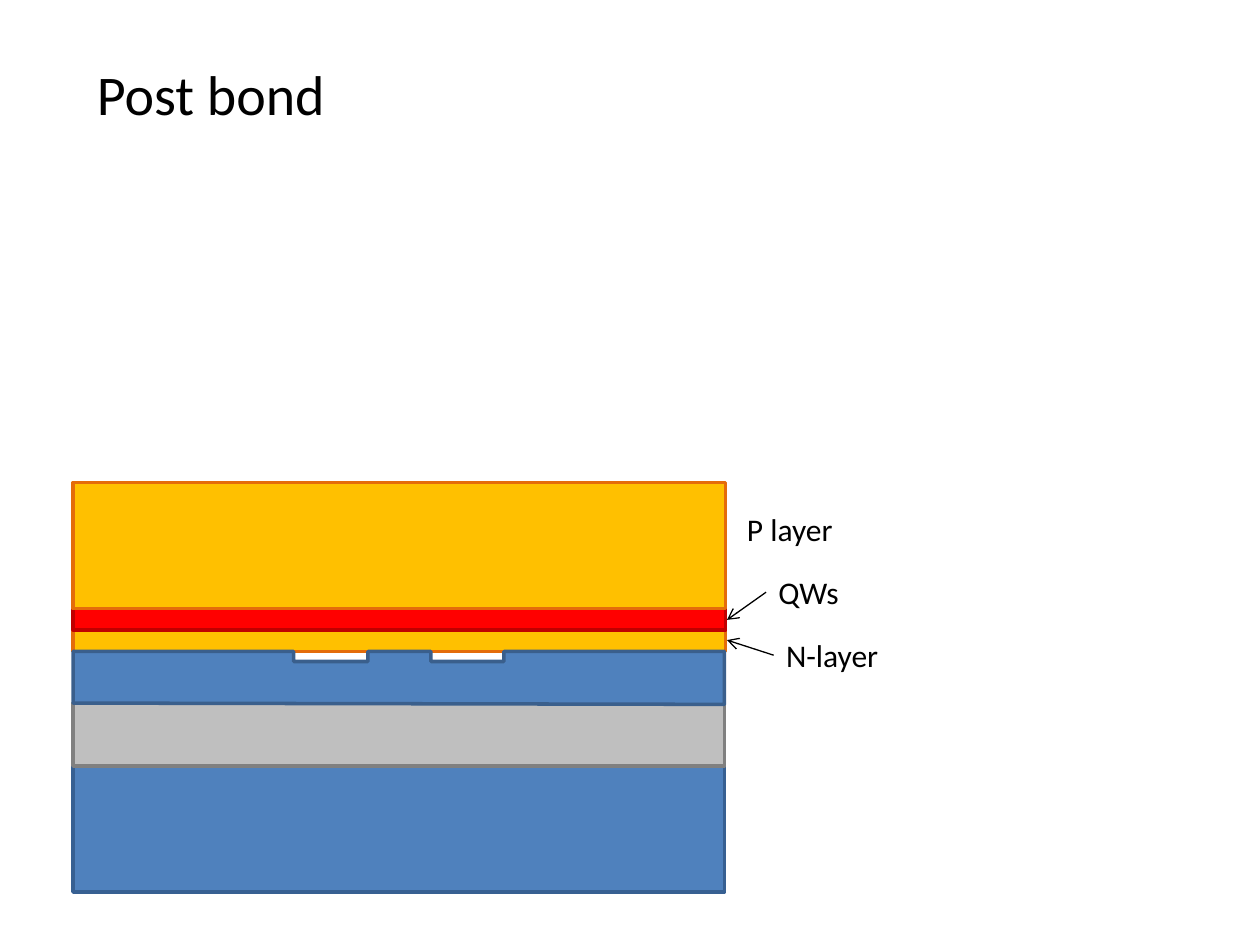
from lxml import etree
from pptx import Presentation
from pptx.dml.color import RGBColor
from pptx.enum.shapes import MSO_CONNECTOR, MSO_SHAPE
from pptx.oxml.ns import qn
from pptx.util import Inches, Pt

LEFT = 0.58
EPI_WIDTH, WAFER_WIDTH = 5.18, 5.17
LAYERS = [
    (5, EPI_WIDTH, 0.17, "FFC000", "E46C0A"),
    (4.83, EPI_WIDTH, 0.17, "FF0000", "C00000"),
    (3.83, EPI_WIDTH, 1, "FFC000", "E46C0A"),
    (6.08, WAFER_WIDTH, 1, "4F81BD", "376092"),
    (5.58, WAFER_WIDTH, 0.5, "BFBFBF", "808080"),
]
DEVICE_TOP, TRENCH_FLOOR = 5.17, 5.25
TRENCHES = [(2.33, 2.92), (3.42, 4)]
LABELS = [
    ("P layer", 5.83, 4, 0.89),
    ("QWs", 6.08, 4.5, 0.68),
    ("N-layer", 6.14, 5, 0.94),
]
ARROWS = [((6.08, 4.7), (5.77, 4.92)), ((6.14, 5.2), (5.77, 5.08))]


def color(hex_code):
    return RGBColor.from_string(hex_code)


def paint(shape, fill, line):
    shape.shadow.inherit = False
    shape.fill.solid()
    shape.fill.fore_color.rgb = color(fill)
    shape.line.color.rgb = color(line)
    shape.line.width = Pt(2)


def add_text(slide, text, left, top, width, height=0.4, size=18, wrap=False):
    box = slide.shapes.add_textbox(*map(Inches, (left, top, width, height)))
    box.text_frame.word_wrap = wrap
    run = box.text_frame.paragraphs[0].add_run()
    run.text = text
    run.font.size = Pt(size)
    run.font.name = "Calibri"
    run.font.color.rgb = color("000000")


def add_layer(slide, top, width, height, fill, line):
    box = map(Inches, (LEFT, top, width, height))
    paint(slide.shapes.add_shape(MSO_SHAPE.RECTANGLE, *box), fill, line)


def add_trenched_layer(slide):
    right = LEFT + WAFER_WIDTH
    outline = []
    for start, end in TRENCHES:
        outline += [(start, DEVICE_TOP), (start, TRENCH_FLOOR),
                    (end, TRENCH_FLOOR), (end, DEVICE_TOP)]
    outline += [(right, DEVICE_TOP), (right, 5.59), (LEFT, 5.58)]
    builder = slide.shapes.build_freeform(Inches(LEFT), Inches(DEVICE_TOP))
    builder.add_line_segments([(Inches(x), Inches(y)) for x, y in outline], close=True)
    paint(builder.convert_to_shape(), "4F81BD", "3A5F8C")


def add_arrow(slide, start, end):
    arrow = slide.shapes.add_connector(MSO_CONNECTOR.STRAIGHT, *map(Inches, start + end))
    arrow.line.color.rgb = color("000000")
    arrow.line.width = Pt(0.75)
    etree.SubElement(arrow.line._get_or_add_ln(), qn("a:tailEnd"), type="arrow")
    etree.SubElement(arrow._element.spPr, qn("a:effectLst"))


def main():
    deck = Presentation()
    deck.slide_width, deck.slide_height = Inches(10), Inches(7.5)
    slide = deck.slides.add_slide(deck.slide_layouts[6])
    for layer in LAYERS:
        add_layer(slide, *layer)
    add_trenched_layer(slide)
    add_text(slide, "Post bond", 0.67, 0.42, 7.25, height=0.64, size=32, wrap=True)
    for label in LABELS:
        add_text(slide, *label)
    for start, end in ARROWS:
        add_arrow(slide, start, end)
    deck.save("out.pptx")


if __name__ == "__main__":
    main()
